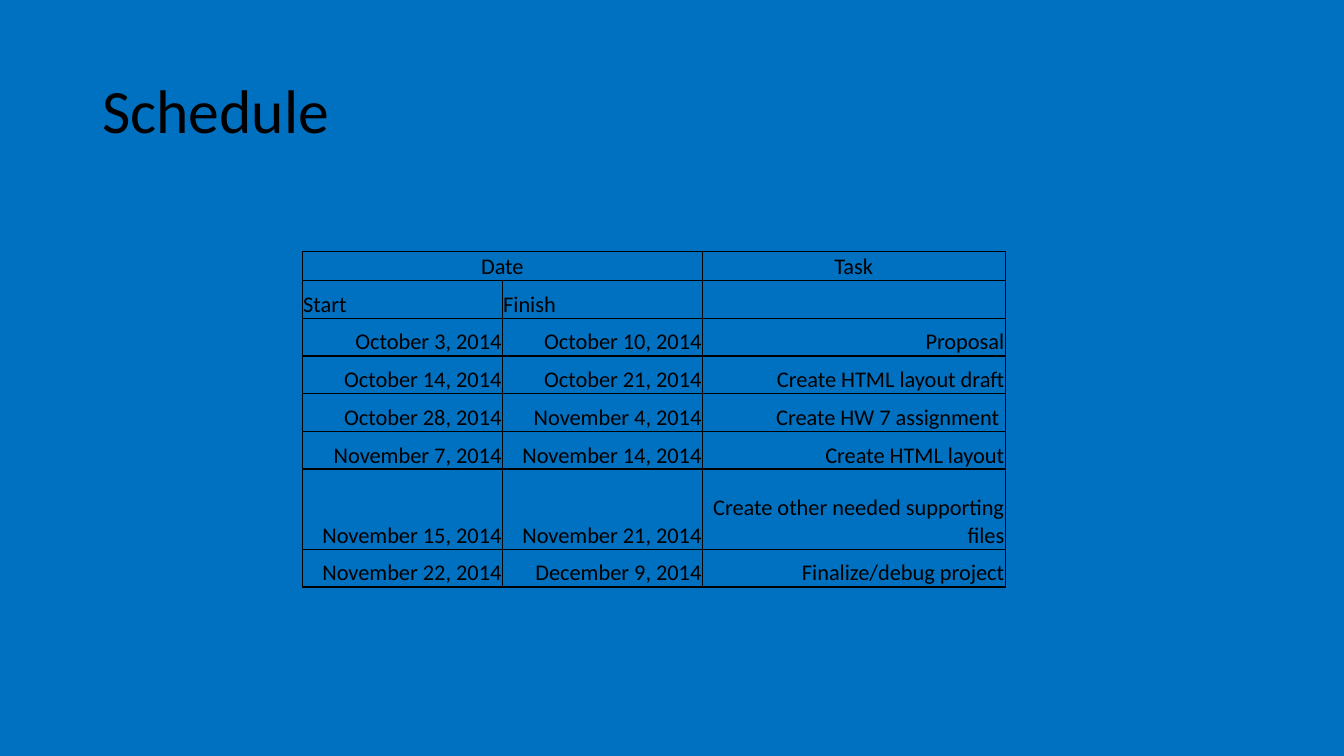
from lxml.etree import SubElement
from pptx import Presentation
from pptx.dml.color import RGBColor
from pptx.enum.text import MSO_ANCHOR, PP_ALIGN
from pptx.oxml.ns import qn
from pptx.util import Cm, Pt

COLORS = {"background": "0070C0", "ink": "000000"}
COLUMN_WIDTHS = [5.04, 5.04, 7.63]
ROW_HEIGHTS = [0.73] + [0.95] * 5 + [2.02, 0.95]
SCHEDULE = [
    ("Date", "", "Task"),
    ("Start", "Finish", ""),
    ("October 3, 2014", "October 10, 2014", "Proposal"),
    ("October 14, 2014", "October 21, 2014", "Create HTML layout draft"),
    ("October 28, 2014", "November 4, 2014", "Create HW 7 assignment "),
    ("November 7, 2014", "November 14, 2014", "Create HTML layout"),
    ("November 15, 2014", "November 21, 2014", "Create other needed supporting files"),
    ("November 22, 2014", "December 9, 2014", "Finalize/debug project"),
]


def write_text(frame, text, size, align=PP_ALIGN.LEFT, line_spacing=1.0):
    para = frame.paragraphs[0]
    para.alignment = align
    para.line_spacing = line_spacing
    para.font.size = Pt(size)
    if text:
        span = para.add_run()
        span.text = text
        span.font.name = "Calibri"
        span.font.size = Pt(size)
        span.font.color.rgb = RGBColor.from_string(COLORS["ink"])


def add_borders(cell):
    properties = cell._tc.get_or_add_tcPr()
    for side in ("lnL", "lnR", "lnT", "lnB"):
        line = SubElement(properties, qn(f"a:{side}"), w=str(Pt(1)))
        fill = SubElement(line, qn("a:solidFill"))
        SubElement(fill, qn("a:srgbClr"), val=COLORS["ink"])


deck = Presentation()
deck.slide_width, deck.slide_height = Cm(33.87), Cm(19.05)
page = deck.slides.add_slide(deck.slide_layouts[6])
page.background.fill.solid()
page.background.fill.fore_color.rgb = RGBColor.from_string(COLORS["background"])

title = page.shapes.add_textbox(Cm(2.33), Cm(1.01), Cm(29.21), Cm(3.68))
title.text_frame.word_wrap = True
title.text_frame.vertical_anchor = MSO_ANCHOR.MIDDLE
write_text(title.text_frame, "Schedule", size=44, line_spacing=0.9)

table = page.shapes.add_table(
    len(SCHEDULE), len(COLUMN_WIDTHS), Cm(7.62), Cm(6.34),
    Cm(sum(COLUMN_WIDTHS)), Cm(sum(ROW_HEIGHTS))).table
table.first_row = table.horz_banding = False
for column, width in zip(table.columns, COLUMN_WIDTHS):
    column.width = Cm(width)
for row, height in zip(table.rows, ROW_HEIGHTS):
    row.height = Cm(height)
table.cell(0, 0).merge(table.cell(0, 1))

heading_aligns = [PP_ALIGN.CENTER, PP_ALIGN.LEFT]
for row_index, entries in enumerate(SCHEDULE):
    align = heading_aligns[row_index] if row_index < 2 else PP_ALIGN.RIGHT
    for column_index, text in enumerate(entries):
        cell = table.cell(row_index, column_index)
        cell.vertical_anchor = MSO_ANCHOR.BOTTOM
        cell.margin_left = cell.margin_right = cell.margin_top = Cm(0.02)
        cell.margin_bottom = 0
        add_borders(cell)
        cell.fill.background()
        write_text(cell.text_frame, text, size=16, align=align)

deck.save("out.pptx")
